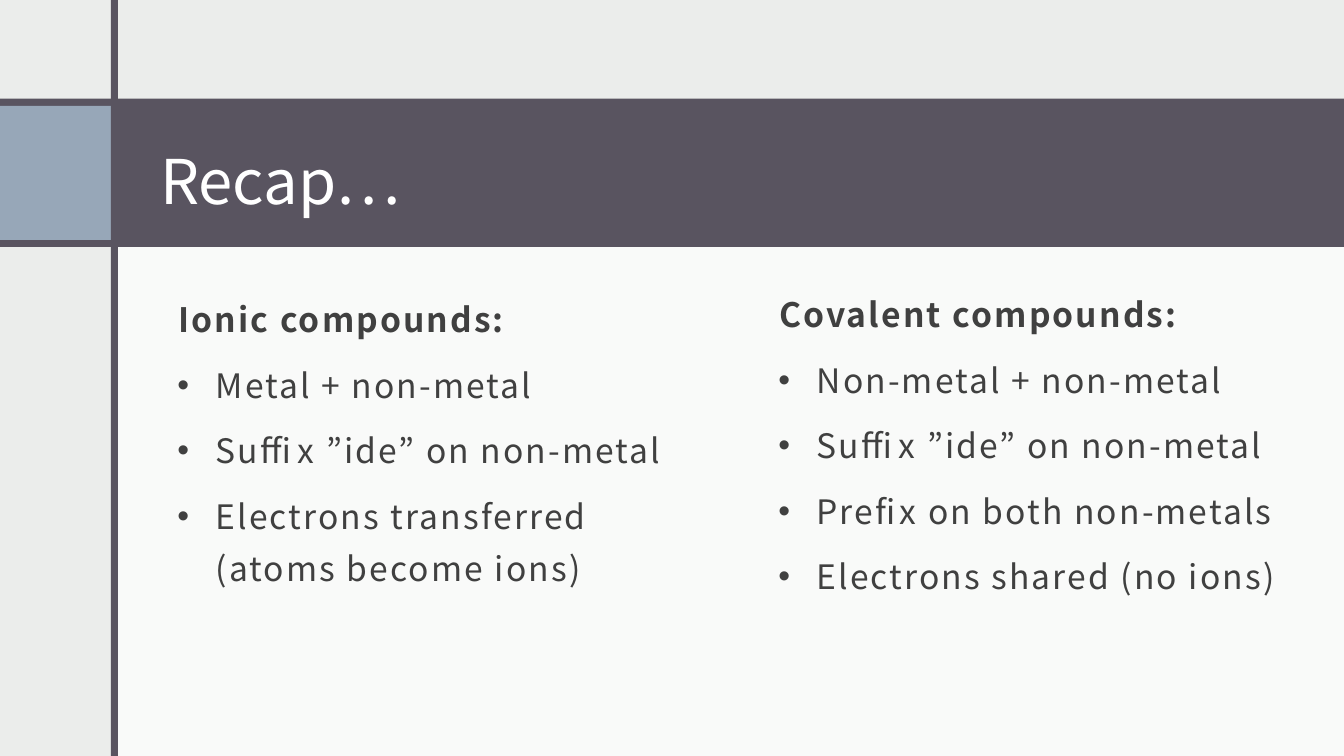
from dataclasses import dataclass

from lxml import etree
from pptx import Presentation
from pptx.dml.color import RGBColor
from pptx.enum.shapes import MSO_SHAPE
from pptx.enum.text import MSO_ANCHOR
from pptx.oxml.ns import qn
from pptx.util import Pt

RECTANGLE = MSO_SHAPE.RECTANGLE
TOP = MSO_ANCHOR.TOP
PX = 9144  # EMU, 100 px to the inch
PAGE = (0, 0, 1333, 750)


@dataclass(frozen=True)
class Theme:
    font: str = "Noto Sans CJK JP"
    ground: str = "EBEDEB"
    panel: str = "FFFFFF"
    band: str = "595460"
    accent: str = "97A7B8"
    title: str = "FFFFFF"
    body: str = "404040"
    title_size: int = 44
    body_size: int = 24
    line_spacing: float = 1.3
    space_before: float = 9.3


THEME = Theme()

COLUMNS = [
    ((71, 273, 642, 477), "Ionic compounds:", [
        "Metal + non-metal",
        "Suffix ”ide” on non-metal",
        "Electrons transferred (atoms become ions)",
    ]),
    ((667, 268, 642, 477), "Covalent compounds:", [
        "Non-metal + non-metal",
        "Suffix ”ide” on non-metal",
        "Prefix on both non-metals",
        "Electrons shared (no ions)",
    ]),
]


def to_emu(box):
    return [length * PX for length in box]


def add_block(page, box, color, opacity=100):
    block = page.shapes.add_shape(RECTANGLE, *to_emu(box))
    block.shadow.inherit = False
    block.line.fill.background()
    block.fill.solid()
    block.fill.fore_color.rgb = RGBColor.from_string(color)
    if opacity < 100:
        tint = block.fill._xPr.find(qn("a:solidFill"))[0]
        etree.SubElement(tint, qn("a:alpha"), val=str(opacity * 1000))
    return block


def add_text_frame(page, box, insets):
    """Add a wrapping text box; insets are left, top, right, bottom."""
    frame = page.shapes.add_textbox(*to_emu(box)).text_frame
    frame.word_wrap = True
    frame.vertical_anchor = TOP
    (frame.margin_left, frame.margin_top,
     frame.margin_right, frame.margin_bottom) = to_emu(insets)
    return frame


def write_para(para, text, *, size, color, bold=False, tracking=0,
               before=0, margin=0, indent=0, bullet=None):
    """Fill a paragraph; tracking is in hundredths of a point."""
    para.line_spacing = THEME.line_spacing
    para.space_before = Pt(before)
    props = para._p.get_or_add_pPr()
    props.set("marL", str(margin * PX))
    props.set("indent", str(indent * PX))
    if bullet:
        etree.SubElement(props, qn("a:buFont"), typeface="Arial")
        etree.SubElement(props, qn("a:buChar"), char=bullet)
    span = para.add_run()
    span.text = text
    span.font.name = THEME.font
    span.font.size = Pt(size)
    span.font.bold = bold
    span.font.color.rgb = RGBColor.from_string(color)
    if tracking:
        span._r.get_or_add_rPr().set("spc", str(tracking))


def draw_backdrop(page, box):
    """Draw the pale panel, the title band and the vertical rule."""
    left, top, width, height = box
    rule_left, rule_width = left + 110, 7
    band_top, band_height = top + 98, 147
    panel_left, panel_top = left + 114, top + 233
    add_block(page, (panel_left, panel_top, left + width - panel_left,
                     top + height - panel_top), THEME.panel, opacity=75)
    add_block(page, (left, band_top, width, band_height), THEME.band)
    add_block(page, (left, band_top + rule_width, rule_left - left,
                     band_height - 2 * rule_width), THEME.accent)
    add_block(page, (rule_left, top, rule_width, height), THEME.band)


def draw_title(page, box, text):
    frame = add_text_frame(page, box, (10, 5, 10, 5))
    write_para(frame.paragraphs[0], text, size=THEME.title_size,
               color=THEME.title, margin=50, indent=-50)


def draw_column(page, box, heading, points):
    frame = add_text_frame(page, box, (12, 12, 12, 10))
    style = dict(size=THEME.body_size, color=THEME.body, tracking=150,
                 before=THEME.space_before)
    write_para(frame.paragraphs[0], heading, bold=True, margin=94, **style)
    for point in points:
        write_para(frame.add_paragraph(), point, margin=131, indent=-38,
                   bullet="•", **style)


def main():
    deck = Presentation()
    deck.slide_width, deck.slide_height = to_emu(PAGE[2:])
    page = deck.slides.add_slide(deck.slide_layouts[6])
    page.background.fill.solid()
    page.background.fill.fore_color.rgb = RGBColor.from_string(THEME.ground)
    draw_backdrop(page, PAGE)
    draw_title(page, (149, 115, 928, 101), "Recap…")
    for box, heading, points in COLUMNS:
        draw_column(page, box, heading, points)
    deck.save("out.pptx")


if __name__ == "__main__":
    main()
